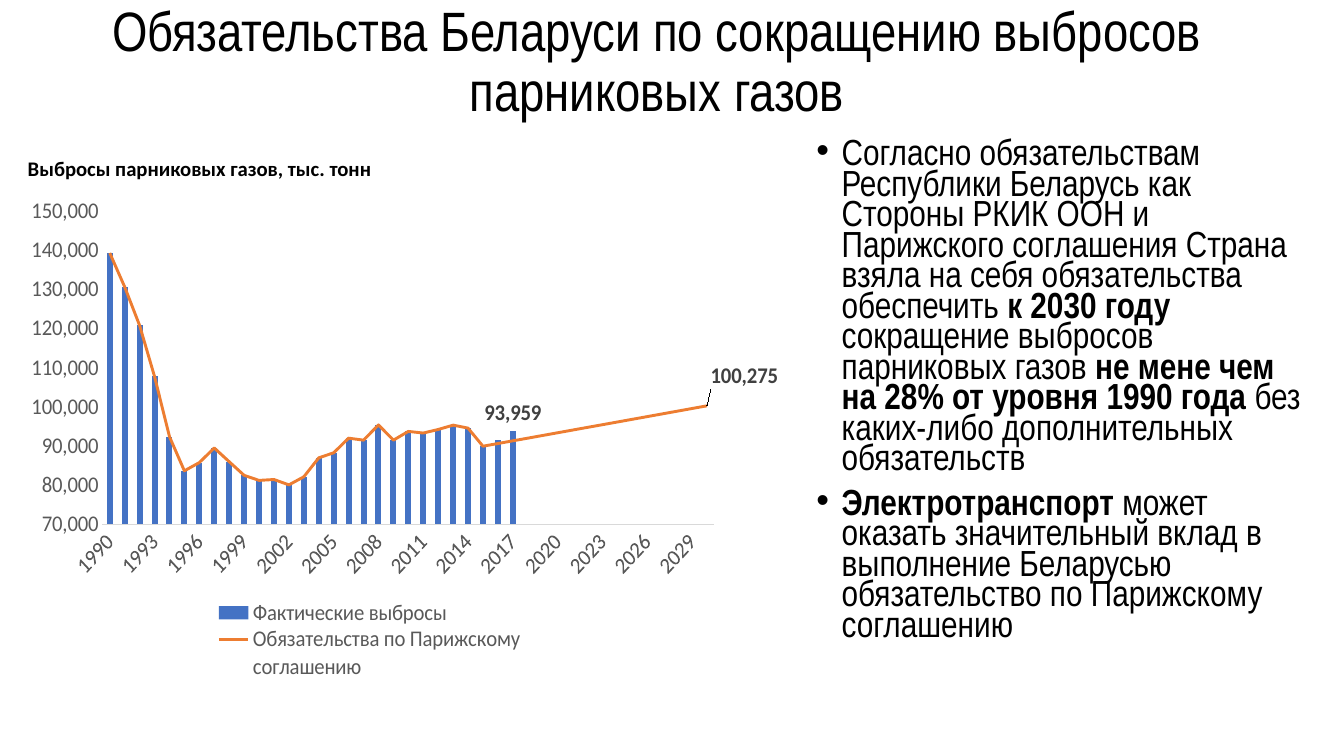
"""Build a slide on the greenhouse gas commitments of Belarus."""
import lxml.etree
import pptx
import pptx.chart.data
import pptx.dml.color
import pptx.enum.chart
import pptx.enum.text
import pptx.oxml
import pptx.oxml.ns
import pptx.util

PX = 9525
BLACK = pptx.dml.color.RGBColor(0x00, 0x00, 0x00)
GREY = pptx.dml.color.RGBColor(0x59, 0x59, 0x59)
DARK = pptx.dml.color.RGBColor(0x40, 0x40, 0x40)
PALE = pptx.dml.color.RGBColor(0xD9, 0xD9, 0xD9)
BLUE = pptx.dml.color.RGBColor(0x44, 0x72, 0xC4)
ORANGE = pptx.dml.color.RGBColor(0xED, 0x7D, 0x31)
NS = pptx.oxml.ns.nsdecls("c")
qn = pptx.oxml.ns.qn


def set_font(font, name, size, color, bold=False):
    font.name = name
    font.size = pptx.util.Pt(size)
    font.color.rgb = color
    font.bold = bold


def layout_xml(**parts):
    body = "".join(f'<c:{key} val="{value}"/>' for key, value in parts.items())
    return pptx.oxml.parse_xml(
        f"<c:layout {NS}><c:manualLayout>{body}</c:manualLayout></c:layout>")


prs = pptx.Presentation()
prs.slide_width, prs.slide_height = 1280 * PX, 720 * PX
slide = prs.slides.add_slide(prs.slide_layouts[1])

title, body = slide.placeholders
caption = slide.shapes.add_textbox(0, 0, 0, 0)
for sp, box in ((title, (28, 29, 1195, 63)), (body, (768, 130, 494, 543)),
                (caption, (17, 146, 354, 44))):
    sp.left, sp.top, sp.width, sp.height = (v * PX for v in box)
    sp.text_frame.word_wrap = True
    sp.text_frame.auto_size = pptx.enum.text.MSO_AUTO_SIZE.NONE

tf = title.text_frame
tf.vertical_anchor = pptx.enum.text.MSO_ANCHOR.MIDDLE
p = tf.paragraphs[0]
p.text = "Обязательства Беларуси по сокращению выбросов парниковых газов"
p.alignment = pptx.enum.text.PP_ALIGN.CENTER
p.line_spacing = 0.9
set_font(p.font, "Arial Narrow", 39.6, BLACK)

p = caption.text_frame.paragraphs[0]
p.text = "Выбросы парниковых газов, тыс. тонн"
p.line_spacing = 0.9
p.space_before = pptx.util.Pt(10)
set_font(p.font, "Calibri", 14.8, BLACK, True)

bullets = [
    [("Согласно обязательствам Республики Беларусь как Стороны РКИК ООН и "
      "Парижского соглашения Страна взяла на себя обязательства обеспечить ", False),
     ("к 2030 году ", True),
     ("сокращение выбросов парниковых газов ", False),
     ("не мене чем на 28% от уровня 1990 года ", True),
     ("без каких-либо дополнительных обязательств", False)],
    [("Электротранспорт ", True),
     ("может оказать значительный вклад в выполнение Беларусью "
      "обязательство по Парижскому соглашению", False)],
]
tf = body.text_frame
for i, runs in enumerate(bullets):
    p = tf.add_paragraph() if i else tf.paragraphs[0]
    p.line_spacing = 0.7
    p.space_before = pptx.util.Pt(10)
    set_font(p.font, "Arial Narrow", 25.9, BLACK)
    pPr = p._p.get_or_add_pPr()
    pPr.set("marL", str(24 * PX))
    pPr.set("indent", str(-24 * PX))
    for text, bold in runs:
        r = p.add_run()
        r.text = text
        r.font.bold = bold

actual = [139270, 130637, 120782, 107755, 92400, 83678, 85783, 89506, 86002, 82530,
          81236, 81463, 80089, 82155, 86985, 88279, 92022, 91506, 95402, 91502,
          93746, 93323, 94239, 95339, 94580, 89953, 91575, 93959]
years = range(1990, 2031)
known = actual[:26]
target = 100275
steps = len(years) - len(known)
pledge = known + [round(known[-1] + (target - known[-1]) * i / steps)
                  for i in range(1, steps + 1)]

data = pptx.chart.data.CategoryChartData(number_format="#,##0")
data.categories = [str(year) for year in years]
data.add_series("Фактические выбросы", actual + [None] * (len(years) - len(actual)))
data.add_series("Обязательства по Парижскому соглашению", pledge)
chart = slide.shapes.add_chart(
    pptx.enum.chart.XL_CHART_TYPE.COLUMN_CLUSTERED,
    17 * PX, 182 * PX, 724 * PX, 474 * PX, data).chart
chart.has_title = False
set_font(chart.font, "Calibri", 16, GREY)

bar = chart.plots[0]._element
line = pptx.oxml.parse_xml(
    f'<c:lineChart {NS}><c:grouping val="standard"/><c:varyColors val="0"/>'
    '<c:marker val="1"/></c:lineChart>')
ser = bar.findall(qn("c:ser"))[1]
for flag in ser.findall(qn("c:invertIfNegative")):
    ser.remove(flag)
line.insert(2, ser)
for ax in bar.findall(qn("c:axId")):
    lxml.etree.SubElement(line, qn("c:axId")).set("val", ax.get("val"))
bar.addnext(line)

columns, lines = chart.plots
columns.gap_width = 150
columns.vary_by_categories = False
emissions, commitment = columns.series[0], lines.series[0]
emissions.format.fill.solid()
emissions.format.fill.fore_color.rgb = BLUE
commitment.format.line.color.rgb = ORANGE
commitment.format.line.width = pptx.util.Pt(2.25)
commitment.marker.style = pptx.enum.chart.XL_MARKER_STYLE.NONE
commitment.smooth = False

position = pptx.enum.chart.XL_LABEL_POSITION
for series, index, place in ((emissions, len(actual) - 1, position.OUTSIDE_END),
                             (commitment, len(years) - 1, position.RIGHT)):
    series.data_labels.show_value = False
    label = series.points[index].data_label
    set_font(label.font, "Calibri", 16, DARK, True)
    label.position = place

dLbls = commitment.data_labels._element
dLbls.find(qn("c:dLbl")).insert(1, layout_xml(x=0, y=-0.06))
dLbls.append(pptx.oxml.parse_xml(
    f'<c:extLst {NS}><c:ext uri="{{CE6537A1-D6FC-4f65-9D91-7224C49458BB}}" '
    'xmlns:c15="http://schemas.microsoft.com/office/drawing/2012/chart">'
    '<c15:showLeaderLines val="1"/></c:ext></c:extLst>'))

none = pptx.enum.chart.XL_TICK_MARK.NONE
cat, val = chart.category_axis, chart.value_axis
for axis in (cat, val):
    axis.major_tick_mark = axis.minor_tick_mark = none
    axis.has_major_gridlines = False
    set_font(axis.tick_labels.font, "Calibri", 16, GREY)
cat.format.line.color.rgb = PALE
cat.format.line.width = pptx.util.Pt(0.75)
cat._element.find(qn("c:txPr")).find(qn("a:bodyPr")).set("rot", "-2700000")
skip = pptx.oxml.parse_xml(f'<c:tickLblSkip {NS} val="3"/>')
cat._element.find(qn("c:noMultiLvlLbl")).addprevious(skip)
val.format.line.fill.background()
val.minimum_scale, val.maximum_scale, val.major_unit = 70000, 150000, 10000
val.tick_labels.number_format = "#,##0"
val.tick_labels.number_format_is_linked = False

chart.has_legend = True
legend = chart.legend
legend.position = pptx.enum.chart.XL_LEGEND_POSITION.BOTTOM
legend.include_in_layout = False
set_font(legend.font, "Calibri", 16, GREY)
for old in legend._element.findall(qn("c:layout")):
    legend._element.remove(old)
legend._element.find(qn("c:legendPos")).addnext(
    layout_xml(xMode="edge", yMode="edge", x=0.21, y=0.82, w=0.58, h=0.16))

plot_area = bar.getparent()
for old in plot_area.findall(qn("c:layout")):
    plot_area.remove(old)
plot_area.insert(0, layout_xml(layoutTarget="inner", xMode="edge", yMode="edge",
                               x=0.12, y=0.04, w=0.87, h=0.63))

prs.save("out.pptx")
